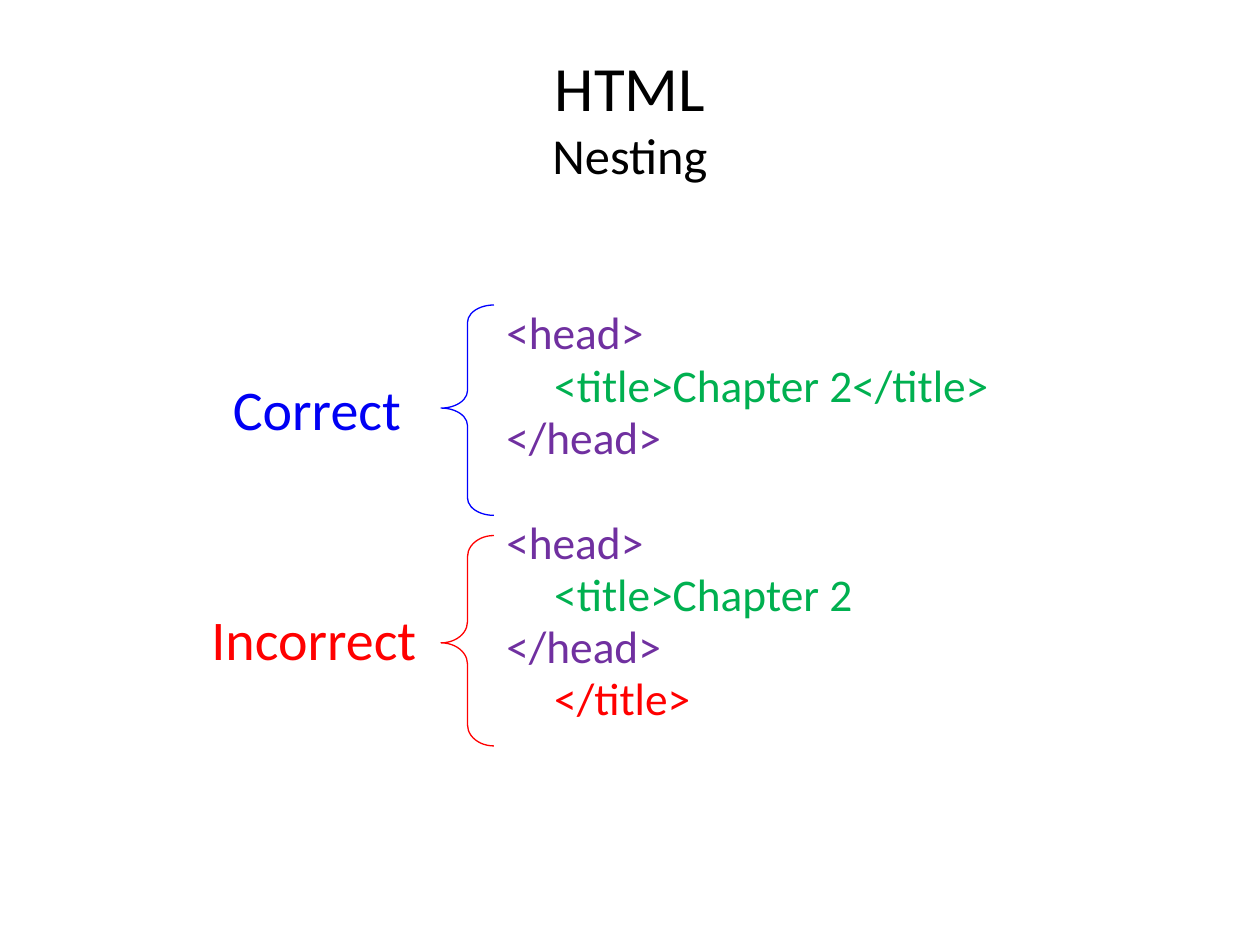
import pptx
import pptx.dml.color
import pptx.enum.shapes
import pptx.enum.text
import pptx.util

Inches = pptx.util.Inches
Pt = pptx.util.Pt
ALIGN = pptx.enum.text.PP_ALIGN
ANCHOR = pptx.enum.text.MSO_ANCHOR

WIDTH, HEIGHT = 10, 7.5
FONT = "Calibri"
PURPLE, GREEN, RED, BLUE = "7030A0", "00B050", "FF0000", "0000FF"
CODE_SIZE = 25.9
CODE_INDENT = 0.38
CODE_GAP = 5
CODE_GROUP_GAP = 35

CORRECT_CODE = [
    ("<head>", PURPLE, 0),
    ("<title>Chapter 2</title>", GREEN, 1),
    ("</head>", PURPLE, 0),
]
INCORRECT_CODE = [
    ("<head>", PURPLE, 0),
    ("<title>Chapter 2", GREEN, 1),
    ("</head>", PURPLE, 0),
    ("</title>", RED, 1),
]


def colour(value):
    return pptx.dml.color.RGBColor.from_string(value)


def apply(target, values):
    for name, value in values.items():
        setattr(target, name, value)


def add_text(page, box, **values):
    frame = page.shapes.add_textbox(*map(Inches, box)).text_frame
    apply(frame, {"word_wrap": True, **values})
    return frame


def add_span(para, text, size, value):
    span = para.add_run()
    span.text = text
    apply(span.font, {"name": FONT, "size": Pt(size)})
    span.font.color.rgb = colour(value)


def add_heading(page, box):
    frame = add_text(page, box, vertical_anchor=ANCHOR.MIDDLE)
    para = frame.paragraphs[0]
    para.alignment = ALIGN.CENTER
    add_span(para, "HTML", 36, "000000")
    para.add_line_break()
    add_span(para, "Nesting", 28.8, "000000")


def add_code(page, box, groups):
    frame = add_text(page, box)
    para = frame.paragraphs[0]
    for group_index, group in enumerate(groups):
        for line_index, (text, value, level) in enumerate(group):
            first_line = line_index == 0
            if group_index or not first_line:
                para = frame.add_paragraph()
            new_group = group_index and first_line
            gap = CODE_GROUP_GAP if new_group else CODE_GAP
            apply(para, {"line_spacing": 0.8, "space_before": Pt(gap)})
            para._p.get_or_add_pPr().set("marL", str(Inches(level * CODE_INDENT)))
            add_span(para, text, CODE_SIZE, value)


def add_label(page, box, text, value):
    frame = add_text(page, box, word_wrap=False)
    add_span(frame.paragraphs[0], text, 32, value)


def add_brace(page, box, value, curve):
    kind = pptx.enum.shapes.MSO_SHAPE.RIGHT_BRACE
    brace = page.shapes.add_shape(kind, *map(Inches, box))
    brace.rotation = 180
    brace.shadow.inherit = False
    brace.fill.background()
    brace.line.color.rgb = colour(value)
    brace.line.width = Pt(0.75)
    brace.adjustments[0], brace.adjustments[1] = curve


def main():
    deck = pptx.Presentation()
    apply(deck, {"slide_width": Inches(WIDTH), "slide_height": Inches(HEIGHT)})
    page = deck.slides.add_slide(deck.slide_layouts[6])

    add_heading(page, (0.05 * WIDTH, 0.04 * HEIGHT, 0.9 * WIDTH, 1.25))
    add_code(page, (3.92, 2.45, 4.75, 3.65), [CORRECT_CODE, INCORRECT_CODE])
    sides = [
        ("Correct", "0000F4", (1.75, 2.92, 1.66, 0.63), BLUE, 2.42, (0.33, 0.51)),
        ("Incorrect", RED, (1.58, 4.75, 1.93, 0.63), RED, 4.25, (0.4, 0.49)),
    ]
    for text, text_colour, box, line_colour, top, curve in sides:
        add_label(page, box, text, text_colour)
        add_brace(page, (3.5, top, 0.42, 1.67), line_colour, curve)
    deck.save("out.pptx")


if __name__ == "__main__":
    main()
